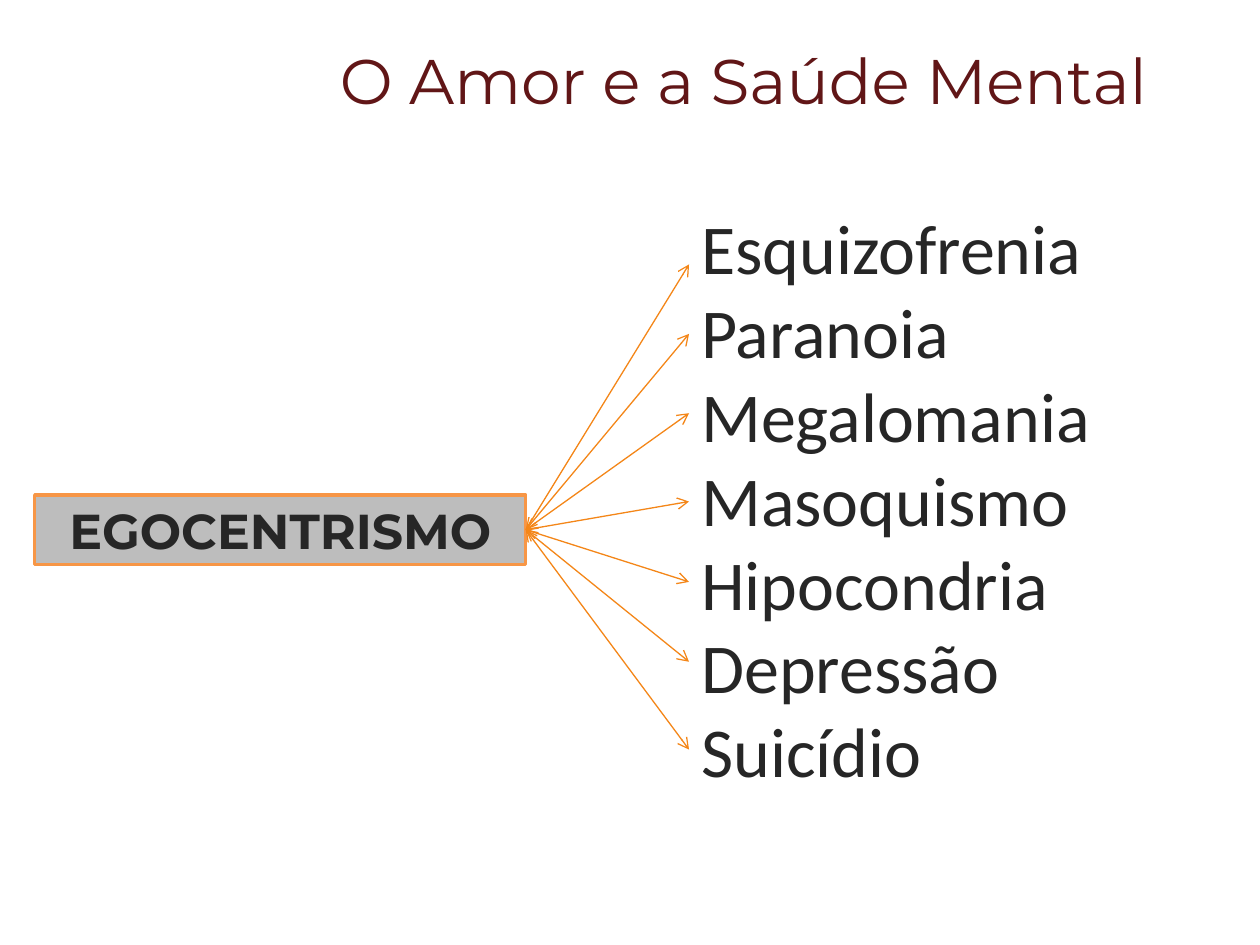
"""Builds a slide linking egocentrism to seven mental health conditions."""
import pptx
import pptx.dml.color
import pptx.enum.shapes
import pptx.enum.text
import pptx.oxml.ns
import pptx.util
from lxml import etree

Cm = pptx.util.Cm
Pt = pptx.util.Pt
RGBColor = pptx.dml.color.RGBColor
MAROON = RGBColor(0x61, 0x16, 0x17)
GRAY = RGBColor(0xBD, 0xBD, 0xBD)
ORANGE = RGBColor(0xF7, 0x96, 0x46)
ARROW_ORANGE = RGBColor(0xF4, 0x86, 0x18)
INK = RGBColor(0x26, 0x26, 0x26)


def format_paragraph(paragraph, font_name, size, color, alignment, bold=False):
    paragraph.alignment = alignment
    for run in paragraph.runs:
        run.font.name = font_name
        run.font.size = Pt(size)
        run.font.bold = bold
        run.font.color.rgb = color


presentation = pptx.Presentation()
presentation.slide_width = Cm(25.4)
presentation.slide_height = Cm(19.05)
slide = presentation.slides.add_slide(presentation.slide_layouts[5])
align = pptx.enum.text.PP_ALIGN
middle = pptx.enum.text.MSO_ANCHOR.MIDDLE

title = slide.shapes.title
title.left, title.top, title.width, title.height = Cm(4.57), Cm(0), Cm(20.83), Cm(3.18)
title.text_frame.text = "O Amor e a Saúde Mental"
title.text_frame.vertical_anchor = middle
format_paragraph(title.text_frame.paragraphs[0], "Montserrat", 36, MAROON, align.CENTER)

egocentrism = slide.shapes.add_shape(
    pptx.enum.shapes.MSO_SHAPE.RECTANGLE, Cm(0.7), Cm(9.98), Cm(9.9), Cm(1.4)
)
egocentrism.shadow.inherit = False
egocentrism.fill.solid()
egocentrism.fill.fore_color.rgb = GRAY
egocentrism.line.color.rgb = ORANGE
egocentrism.line.width = Pt(2)
egocentrism.text_frame.text = "EGOCENTRISMO"
egocentrism.text_frame.vertical_anchor = middle
format_paragraph(
    egocentrism.text_frame.paragraphs[0], "Montserrat", 28, INK, align.CENTER, bold=True
)

conditions = slide.shapes.add_textbox(Cm(13.89), Cm(3.99), Cm(9.2), Cm(12.22))
conditions.text_frame.word_wrap = True
conditions.text_frame.auto_size = pptx.enum.text.MSO_AUTO_SIZE.SHAPE_TO_FIT_TEXT
conditions.text_frame.text = "\n".join([
    "Esquizofrenia", "Paranoia", "Megalomania", "Masoquismo",
    "Hipocondria", "Depressão", "Suicídio",
])
for condition in conditions.text_frame.paragraphs:
    condition.line_spacing = Pt(48)
    format_paragraph(condition, "Calibri", 40, INK, align.LEFT)

arrow_targets = [
    (6.73, True), (8.33, True), (10.11, True), (11.73, True),
    (13.34, True), (15.11, True), (5.33, False),
]
for target_y, two_headed in arrow_targets:
    arrow = slide.shapes.add_connector(
        pptx.enum.shapes.MSO_CONNECTOR.STRAIGHT, Cm(10.6), Cm(10.68), Cm(13.89), Cm(target_y)
    )
    arrow.begin_connect(egocentrism, 3)
    arrow.line.color.rgb = ARROW_ORANGE
    arrow.line.width = Pt(0.75)
    outline = arrow.line._get_or_add_ln()
    for end in ["a:headEnd", "a:tailEnd"] if two_headed else ["a:tailEnd"]:
        etree.SubElement(outline, pptx.oxml.ns.qn(end), type="arrow")
    etree.SubElement(arrow._element.spPr, pptx.oxml.ns.qn("a:effectLst"))

presentation.save("out.pptx")
